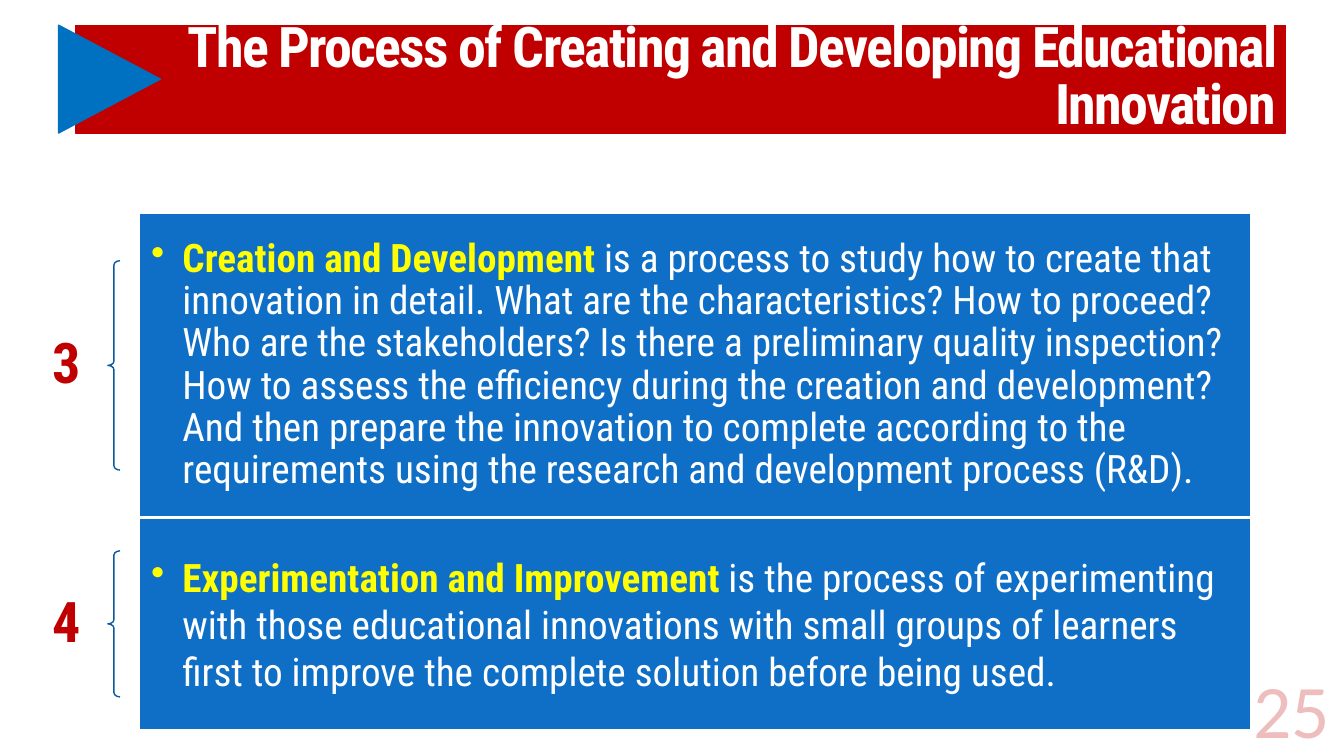
from lxml.etree import SubElement
from pptx import Presentation
from pptx.dml.color import RGBColor
from pptx.enum.shapes import MSO_SHAPE
from pptx.enum.text import MSO_ANCHOR, PP_ALIGN
from pptx.oxml.ns import qn
from pptx.util import Inches, Pt

TITLE = "The Process of Creating and Developing Educational Innovation"
PAGE = "25"
# number, heading, body, row height, line spacing
STEPS = [
    ("3", "Creation and Development ",
     "is a process to study how to create that innovation in detail. "
     "What are the characteristics? How to proceed? Who are the stakeholders? "
     "Is there a preliminary quality inspection? How to assess the efficiency "
     "during the creation and development? And then prepare the innovation to "
     "complete according to the requirements using the research and "
     "development process (R&D).", 3.01, 0.9),
    ("4", "Experimentation and Improvement ",
     "is the process of experimenting with those educational innovations with "
     "small groups of learners first to improve the complete solution before "
     "being used.", 2.1, 1.0),
]
COLORS = {"red": "C00000", "arrow": "0070C0", "panel": "0F6FC6",
          "brace": "0C599F", "white": "FFFFFF", "mark": "FFFF00"}
FONT = "Roboto Condensed"
WIDE, HIGH = 13.33, 7.5
TOP, GAP = 2.12, 0.01
NUM_X, NUM_W, NUM_H = 0.25, 0.82, 0.36
BRACE_X, BRACE_W, BRACE_SHARE = 1.07, 0.12, 0.69
PANEL_X, PANEL_W = 1.38, 11.03

deck = Presentation()
deck.slide_width, deck.slide_height = Inches(WIDE), Inches(HIGH)
slide = deck.slides.add_slide(deck.slide_layouts[6])


def tint(name):
    return RGBColor.from_string(COLORS[name])


def draw(kind, box, fill=None, line=None, width=1):
    shape = slide.shapes.add_shape(kind, *map(Inches, box))
    shape.shadow.inherit = False
    if fill:
        shape.fill.solid()
        shape.fill.fore_color.rgb = tint(fill)
    else:
        shape.fill.background()
    shape.line.color.rgb = tint(line)
    shape.line.width = Pt(width)
    return shape


def write(shape, runs, size, font=FONT, align=PP_ALIGN.LEFT, space=1.0,
          anchor=MSO_ANCHOR.MIDDLE, inset=(0.1, 0.05), wrap=True,
          track=None, alpha=None, bullet=None):
    """Fill a shape with one paragraph; runs are (text, color, bold)."""
    frame = shape.text_frame
    frame.word_wrap, frame.vertical_anchor = wrap, anchor
    frame.margin_left = frame.margin_right = Inches(inset[0])
    frame.margin_top = frame.margin_bottom = Inches(inset[1])
    para = frame.paragraphs[0]
    para.alignment, para.line_spacing = align, space
    if bullet:
        props = para._p.get_or_add_pPr()
        props.set("marL", str(Inches(bullet)))
        props.set("indent", str(-Inches(bullet)))
        SubElement(props, qn("a:buChar")).set("char", "•")
    for text, color, bold in runs:
        run = para.add_run()
        run.text = text
        run.font.name, run.font.size, run.font.bold = font, Pt(size), bold
        run.font.color.rgb = tint(color)
        props = run._r.get_or_add_rPr()
        if track:
            props.set("spc", str(round(track * 100)))
        if alpha:
            tone = props.find(".//" + qn("a:srgbClr"))
            SubElement(tone, qn("a:alpha")).set("val", str(alpha * 1000))


def label(box, *args, **form):
    write(slide.shapes.add_textbox(*map(Inches, box)), *args, **form)


banner = draw(MSO_SHAPE.RECTANGLE, (0.75, 0.25, 12, 1.07), "red", "red", 0.75)
write(banner, [(TITLE, "white", True)], 40, align=PP_ALIGN.RIGHT,
      space=0.85, track=-1.2)
arrow = draw(MSO_SHAPE.ISOSCELES_TRIANGLE, (0.55, 0.28, 1.07, 1.01),
             "arrow", "arrow")
arrow.rotation = 90

top = TOP
for num, head, body, tall, space in STEPS:
    mid = top + tall / 2
    label((NUM_X, mid - NUM_H / 2, NUM_W, NUM_H), [(num, "red", True)], 40,
          align=PP_ALIGN.CENTER, space=0.9, inset=(0, 0))
    span = tall * BRACE_SHARE
    brace = draw(MSO_SHAPE.LEFT_BRACE,
                 (BRACE_X, mid - span / 2, BRACE_W, span), line="brace")
    brace.adjustments[0] = 0.35
    panel = draw(MSO_SHAPE.RECTANGLE, (PANEL_X, top, PANEL_W, tall),
                 "panel", "white")
    write(panel, [(head, "mark", True), (body, "white", False)], 28,
          space=space, inset=(0.12, 0.12), bullet=0.31)
    top += tall + GAP

label((10.09, 6, 3.2, 1.53), [(PAGE, "red", False)], 54, font="Calibri",
      align=PP_ALIGN.RIGHT, anchor=MSO_ANCHOR.BOTTOM, alpha=25)

deck.save("out.pptx")
